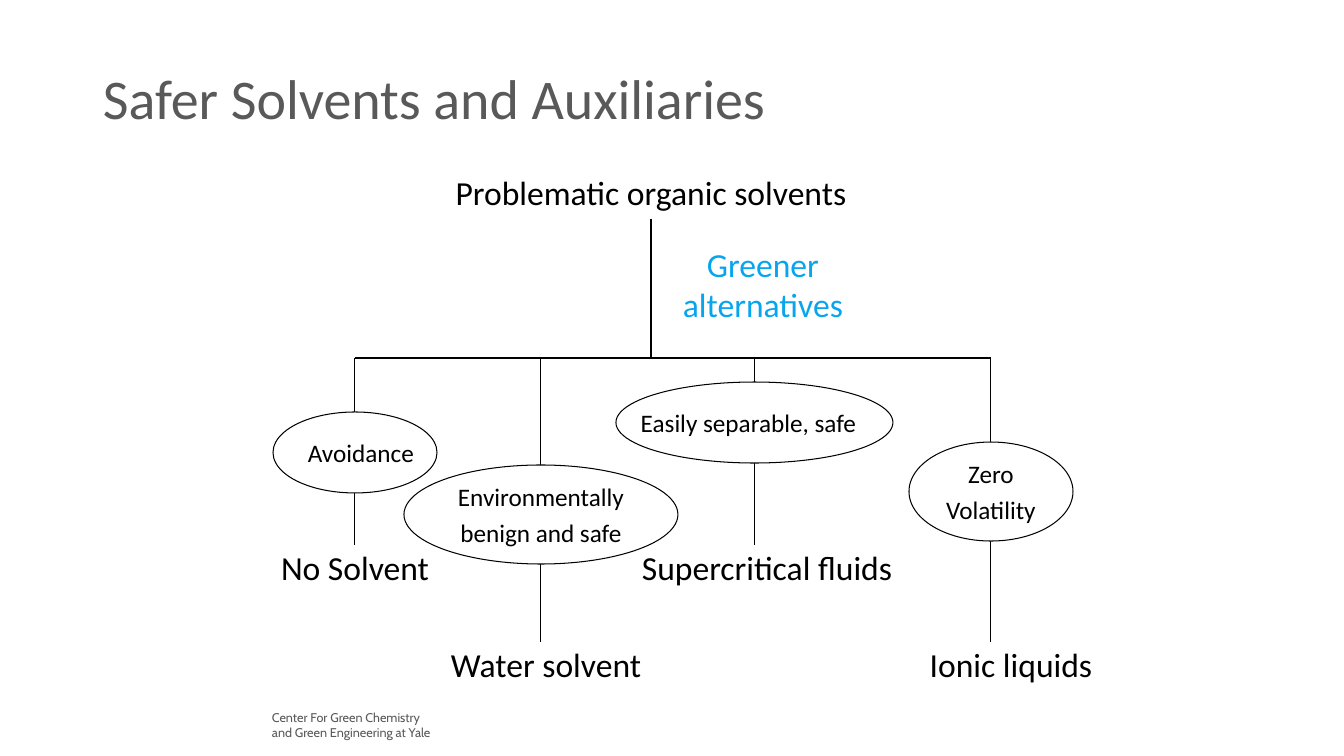
from lxml.etree import SubElement
from pptx import Presentation
from pptx.dml.color import RGBColor
from pptx.enum.shapes import MSO_CONNECTOR as LINE, MSO_SHAPE as SHAPE
from pptx.enum.text import MSO_ANCHOR as ANCHOR, PP_ALIGN as ALIGN
from pptx.oxml.ns import qn
from pptx.util import Emu, Pt

BLACK = RGBColor(0x00, 0x00, 0x00)
WHITE = RGBColor(0xFF, 0xFF, 0xFF)
GRAY = RGBColor(0x59, 0x59, 0x59)
BLUE = RGBColor(0x08, 0xA5, 0xEF)

TOP, BOTTOM = 0, 2  # connection sites
BUS_Y = 358
LABEL_WIDTH, LABEL_HEIGHT = 320, 45

# stem x, ellipse (left, top, width, height), ellipse lines, ellipse text shift,
# result label, label top, label text shift
BRANCHES = [
    (355, (273, 412, 164, 81), ["Avoidance"], 6, "No Solvent", 545, 0),
    (541, (404, 465, 274, 99), ["Environmentally", "benign and safe"], 0,
     "Water solvent", 642, 5),
    (755, (616, 382, 277, 81), ["Easily separable, safe"], -6,
     "Supercritical fluids", 545, 12),
    (991, (909, 442, 164, 99), ["Zero", "Volatility"], 0,
     "Ionic liquids", 642, 20),
]


def px(value):
    return Emu(round(value * 914400 / 100.8))


class SlideBuilder:
    def __init__(self, slide, font="Calibri"):
        self.shapes = slide.shapes
        self.font = font

    def set_text(self, shape, lines, size, color, align=ALIGN.CENTER, font=None,
                 gap=0, inset=5, shift=0, wrap=True):
        """Fill a shape with lines; shift moves centred text sideways."""
        frame = shape.text_frame
        frame.word_wrap = wrap
        frame.margin_left = px(2 * max(shift, 0))
        frame.margin_right = px(2 * max(-shift, 0))
        frame.margin_top = frame.margin_bottom = px(inset)
        frame.text = "\n".join(lines)
        for index, para in enumerate(frame.paragraphs):
            para.alignment = align
            para.space_before = Pt(gap if index else 0)
            para.font.size = Pt(size)
            para.font.name = font or self.font
            para.font.color.rgb = color

    def text(self, place, lines, size, color=BLACK, **style):
        box = self.shapes.add_textbox(*map(px, place))
        self.set_text(box, lines, size, color, **style)
        return box

    def ellipse(self, place, lines, shift):
        oval = self.shapes.add_shape(SHAPE.OVAL, *map(px, place))
        oval.shadow.inherit = False
        oval.fill.solid()
        oval.fill.fore_color.rgb = WHITE
        oval.line.color.rgb = BLACK
        oval.line.width = Pt(0.75)
        self.set_text(oval, lines, 18, BLACK, gap=4.5, inset=0, shift=shift, wrap=False)
        oval.text_frame.vertical_anchor = ANCHOR.MIDDLE

    def line(self, start, end, source=None, target=None):
        link = self.shapes.add_connector(LINE.STRAIGHT, *map(px, start + end))
        link.line.color.rgb = BLACK
        link.line.width = Pt(0.75)
        SubElement(link._element.spPr, qn("a:effectLst"))
        if source is not None:
            link.begin_connect(source, BOTTOM)
        if target is not None:
            link.end_connect(target, TOP)


def main():
    deck = Presentation()
    deck.slide_width, deck.slide_height = px(1344), px(756)
    page = SlideBuilder(deck.slides.add_slide(deck.slide_layouts[6]))

    # Title and footer
    page.text((103, 58, 700, 78), ["Safer Solvents and Auxiliaries"], 40, GRAY,
              align=ALIGN.LEFT, wrap=False)
    page.text((272, 705, 180, 40),
              ["Center For Green Chemistry", "and Green Engineering at Yale"],
              9, GRAY, align=ALIGN.LEFT, font="Cabin")

    # Root of the tree and the bus below it
    root = page.text((378, 165, 546, 54), ["Problematic organic solvents"], 24, inset=7)
    page.line((651, 219), (651, BUS_Y), source=root)
    page.line((BRANCHES[0][0], BUS_Y), (BRANCHES[-1][0], BUS_Y))
    page.text((637, 239, 252, 85), ["Greener alternatives"], 24, BLUE)

    # Result labels with the stems that lead to them
    for x, _, _, _, label, top, shift in BRANCHES:
        result = page.text((x - LABEL_WIDTH // 2, top, LABEL_WIDTH, LABEL_HEIGHT),
                           [label], 24, inset=2, shift=shift)
        page.line((x, BUS_Y), (x, top), target=result)

    # Ellipses over the stems
    for _, place, lines, shift, *_ in BRANCHES:
        page.ellipse(place, lines, shift)

    deck.save("out.pptx")


if __name__ == "__main__":
    main()
